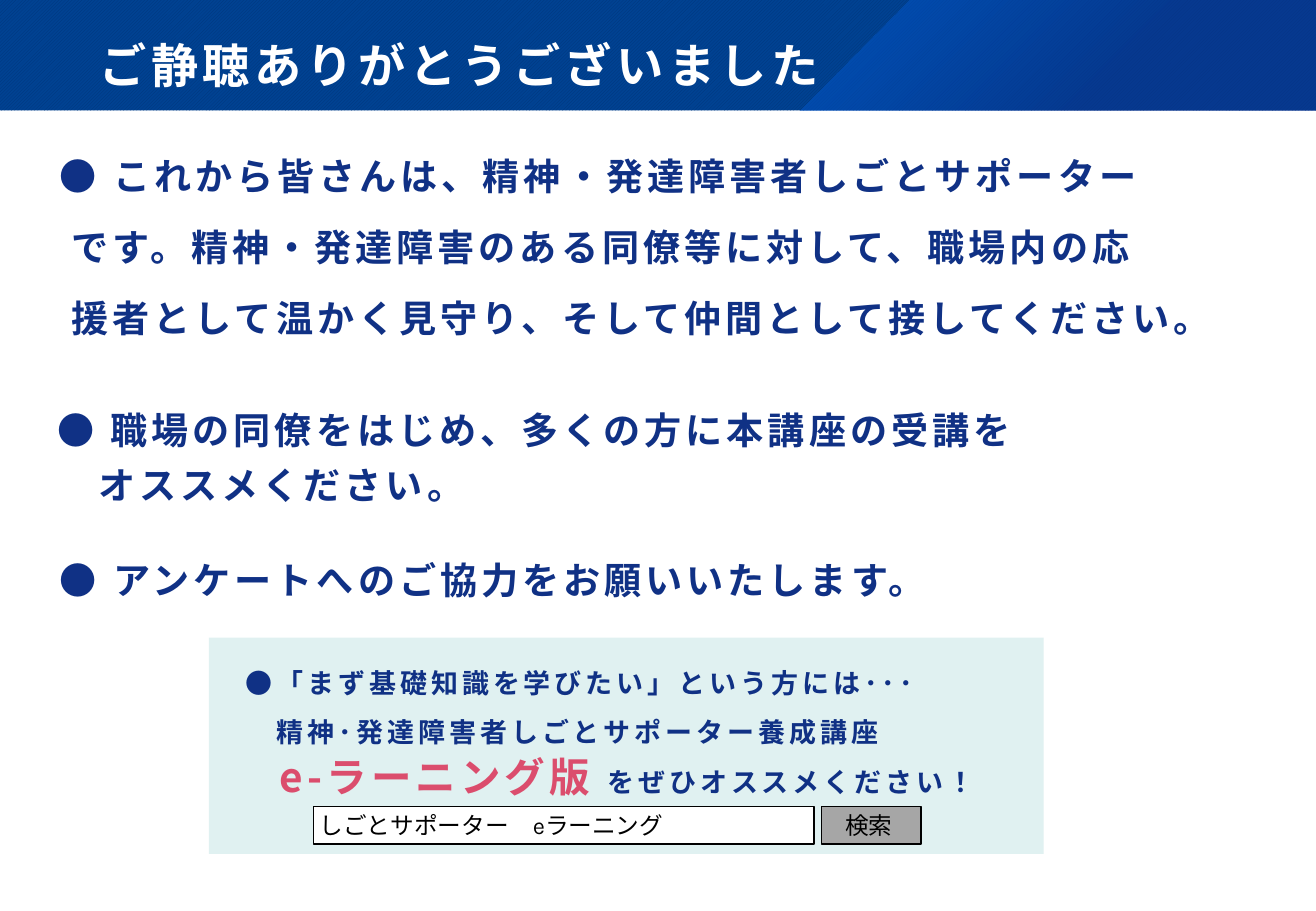
"""Build the closing slide of a workplace supporter course."""
from dataclasses import dataclass

from lxml.etree import SubElement as Sub
from pptx import Presentation as Deck
from pptx.dml.color import RGBColor as Rgb
from pptx.enum.dml import MSO_PATTERN as Pat
from pptx.enum.lang import MSO_LANGUAGE_ID as Lang
from pptx.enum.shapes import MSO_SHAPE as Kind
from pptx.enum.text import MSO_ANCHOR as Anchor, MSO_AUTO_SIZE as Auto, PP_ALIGN as Align
from pptx.oxml import parse_xml as to_xml
from pptx.oxml.ns import nsdecls, qn
from pptx.util import Inches, Pt


@dataclass(frozen=True)
class Theme:
    """Colours, fonts and type sizes of the slide."""
    navy: str = "103185"
    pink: str = "DB4D6D"
    white: str = "FFFFFF"
    black: str = "000000"
    grey: str = "A6A6A6"
    pale: str = "E0F1F1"
    band: tuple = ("003579", "004292")
    glow: tuple = ((0, "0064DF", 50), (62, "0C338E", 55))
    sans: str = "Noto Sans CJK JP"
    latin: str = "Karla"
    head: int = 28
    big: int = 24
    main: int = 22
    note: int = 16
    small: int = 14


class Page:
    """Holds the theme and the current slide."""

    def __init__(self, theme, deck):
        """Open a slide with a title and a body."""
        self.theme = theme
        self.slide = deck.slides.add_slide(deck.slide_layouts[1])
        self.shapes = self.slide.shapes

    def group(self):
        """Send the shapes that follow into a new group."""
        self.shapes = self.slide.shapes.add_group_shape().shapes

    def fit(self, shape, box):
        """Place a shape at left, top, width and height."""
        for name, size in zip(("left", "top", "width", "height"), box):
            setattr(shape, name, Inches(size))

    def rect(self, box, fill=None, line=None):
        """Add a flat rectangle."""
        shape = self.shapes.add_shape(Kind.RECTANGLE, *map(Inches, box))
        shape.shadow.inherit = False
        if fill:
            shape.fill.solid()
            shape.fill.fore_color.rgb = Rgb.from_string(fill)
        if line:
            shape.line.color.rgb = Rgb.from_string(line)
            shape.line.width = Pt(1)
        else:
            shape.line.fill.background()
        return shape

    def band(self, box):
        """Add the hatched header band."""
        fill = self.rect(box).fill
        fill.patterned()
        fill.pattern = Pat.DARK_UPWARD_DIAGONAL
        fore, back = self.theme.band
        fill.fore_color.rgb = Rgb.from_string(fore)
        fill.back_color.rgb = Rgb.from_string(back)

    def glow(self, points):
        """Add the slanted panel with a see-through gradient."""
        first, *rest = [(Inches(x), Inches(y)) for x, y in points]
        outline = self.shapes.build_freeform(*first)
        outline.add_line_segments(rest, close=True)
        shape = outline.convert_to_shape()
        shape.shadow.inherit = False
        shape.line.fill.background()
        shape.fill.background()
        stops = "".join(
            f'<a:gs pos="{pos * 1000}"><a:srgbClr val="{tone}">'
            f'<a:alpha val="{alpha * 1000}"/></a:srgbClr></a:gs>'
            for pos, tone, alpha in self.theme.glow)
        props = shape.element.spPr
        props.replace(props.find(qn("a:noFill")), to_xml(
            f'<a:gradFill {nsdecls("a")} rotWithShape="1"><a:gsLst>{stops}</a:gsLst>'
            '<a:path path="circle"><a:fillToRect r="100000" b="100000"/></a:path>'
            '</a:gradFill>'))

    def text(self, shape, lines, look, pad=(0, 0, 0, 0), anchor=Anchor.TOP, **form):
        """Fill a shape with lines given as an indent and runs."""
        frame = shape.text_frame
        sides = ("margin_left", "margin_top", "margin_right", "margin_bottom")
        setup = dict(zip(sides, map(Inches, pad)), word_wrap=True,
                     auto_size=Auto.NONE, vertical_anchor=anchor)
        for name, value in setup.items():
            setattr(frame, name, value)
        for at, (indent, *runs) in enumerate(lines):
            para = frame.add_paragraph() if at else frame.paragraphs[0]
            for name, value in ({"alignment": Align.LEFT, "space_before": Pt(0)} | form).items():
                setattr(para, name, value)
            props = para._p.get_or_add_pPr()
            props.set("marL", str(Inches(indent)))
            props.set("indent", "0")
            Sub(props, qn("a:buNone"))
            for words, *change in runs:
                self.run(para, words, look | (change[0] if change else {}))

    def run(self, para, words, look):
        """Add one run with its font, colour and letter spacing."""
        run = para.add_run()
        run.text = words
        font = run.font
        values = {"name": look["face"], "size": Pt(look["size"]),
                  "bold": look["bold"], "language_id": Lang.JAPANESE}
        for name, value in values.items():
            setattr(font, name, value)
        font.color.rgb = Rgb.from_string(look["tone"])
        props = run._r.get_or_add_rPr()
        props.set("spc", str(int(look["gap"] * 100)))
        Sub(props, qn("a:ea")).set("typeface", self.theme.sans)

    def title(self, box, words):
        """Place the title above the band."""
        shape = self.slide.shapes.title
        self.slide.shapes.element.append(shape.element)
        self.fit(shape, box)
        theme = self.theme
        look = dict(face=theme.latin, size=theme.head, tone=theme.white, bold=True, gap=2.7)
        self.text(shape, [(0.43, (words,))], look, (0.39, 0.36, 0.36, 0.14),
                  Anchor.BOTTOM, line_spacing=0.9)

    def list(self, box, lines, size, body=False):
        """Add a block of bold lines, in the body if asked."""
        if body:
            shape = self.slide.placeholders[1]
            self.slide.shapes.element.append(shape.element)
            self.fit(shape, box)
        else:
            shape = self.shapes.add_textbox(*map(Inches, box))
        theme = self.theme
        look = dict(face=theme.sans, size=size, tone=theme.navy, bold=True, gap=2.4)
        self.text(shape, lines, look, space_after=Pt(8),
                  line_spacing=1.3 if body else Pt(25))

    def field(self, box, fill, words, indent=0, align=Align.LEFT):
        """Add an outlined field with a plain label."""
        theme = self.theme
        look = dict(face=theme.latin, size=theme.small, tone=theme.black, bold=False, gap=0)
        self.text(self.rect(box, fill, theme.black), [(indent, (words,))], look,
                  (0, 0.04, 0.04, 0.04), Anchor.MIDDLE, alignment=align)


def main():
    """Draw the slide and save it."""
    theme = Theme()
    deck = Deck()
    deck.slide_width, deck.slide_height = Inches(10.83), Inches(7.5)
    page = Page(theme, deck)
    page.band((0, 0, 10.83, 0.91))
    page.glow([(7.49, 0), (10.83, 0), (10.83, 0.91), (6.58, 0.91)])
    page.title((0, 0, 10.83, 0.91), "ご静聴ありがとうございました")
    page.list((0.49, 1.15, 10.2, 1.64), [
        (0, ("● これから皆さんは、精神・発達障害者しごとサポーター",)),
        (0.1, ("です。精神・発達障害のある同僚等に対して、職場内の応",)),
        (0.1, ("援者として温かく見守り、そして仲間として接してください。",)),
    ], theme.main, body=True)
    page.list((0.47, 3.37, 9.86, 0.83), [
        (0, ("● 職場の同僚をはじめ、多くの方に本講座の受講を",)),
        (0.34, ("オススメください。",)),
    ], theme.main)
    page.list((0.49, 4.61, 9.86, 0.36),
              [(0, ("● アンケートへのご協力をお願いいたします。",))], theme.main)

    page.group()
    page.rect((1.72, 5.25, 6.87, 1.78), theme.pale)
    accent = {"size": theme.big, "tone": theme.pink}
    notes = [
        (2.02, 5.41, (0, ("●「まず基礎知識を学びたい」という方には･･･",))),
        (2.02, 5.81, (0.26, ("精神･発達障害者しごとサポーター養成講座",))),
        (2.04, 6.24, (0.26, ("e-ラーニング版 ", accent), ("をぜひオススメください！",))),
    ]
    for left, top, line in notes:
        page.list((left, top, 9.86, 0.33), [line], theme.note)
    page.field((2.58, 6.64, 4.12, 0.31), theme.white, "しごとサポーター　eラーニング", 0.05)
    page.field((6.76, 6.64, 0.82, 0.31), theme.grey, "検索", align=Align.CENTER)
    deck.save("out.pptx")


if __name__ == "__main__":
    main()
